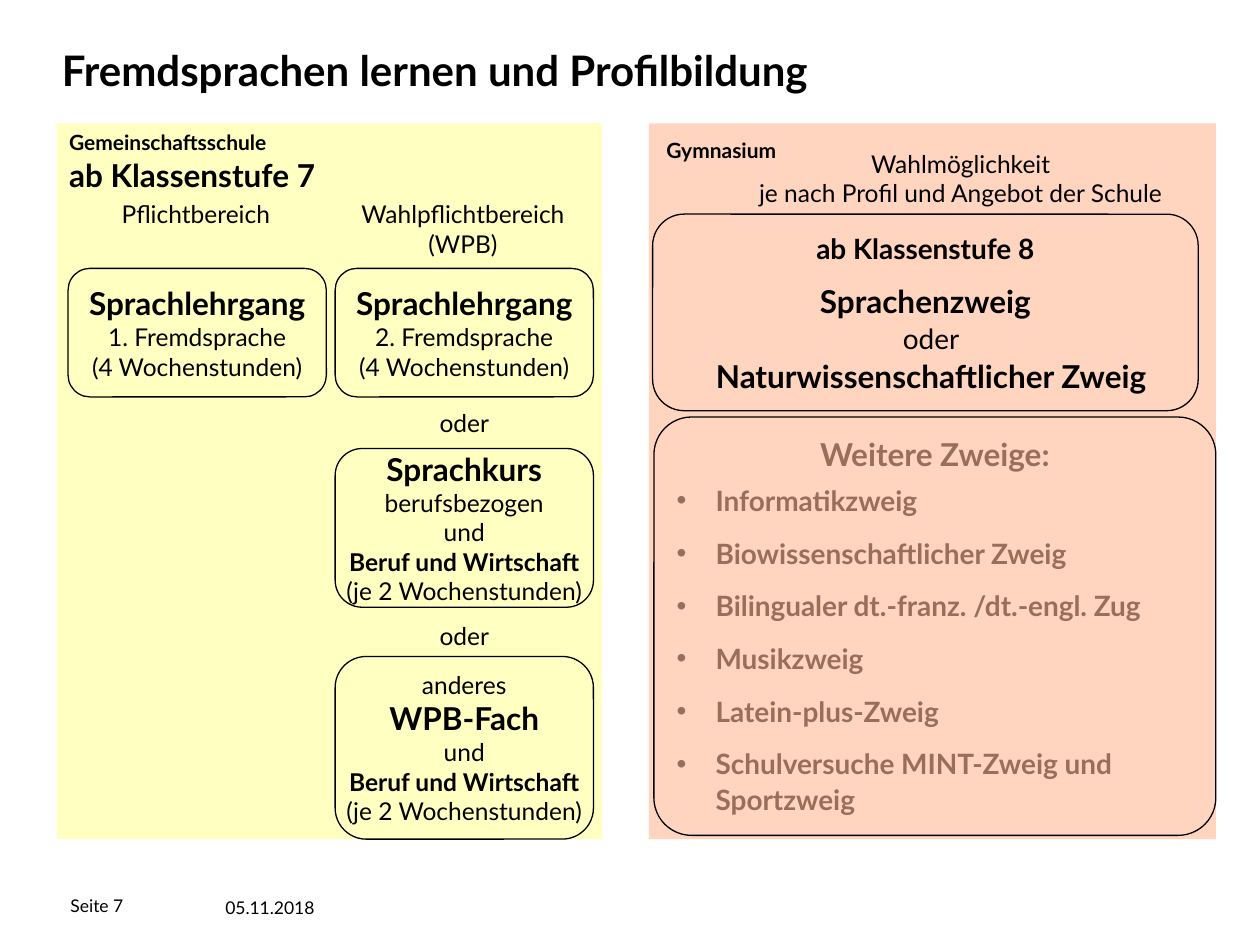
from collections import namedtuple

from lxml import etree
from pptx import Presentation
from pptx.dml.color import RGBColor
from pptx.enum.shapes import MSO_SHAPE
from pptx.enum.text import MSO_ANCHOR, MSO_AUTO_SIZE, PP_ALIGN
from pptx.oxml.ns import qn
from pptx.util import Inches, Pt

RECTANGLE, ROUNDED = MSO_SHAPE.RECTANGLE, MSO_SHAPE.ROUNDED_RECTANGLE
TOP, MIDDLE = MSO_ANCHOR.TOP, MSO_ANCHOR.MIDDLE
LEFT, CENTER = PP_ALIGN.LEFT, PP_ALIGN.CENTER
NO_AUTOFIT = MSO_AUTO_SIZE.NONE

BLACK = RGBColor(0x00, 0x00, 0x00)
YELLOW = RGBColor(0xFF, 0xFF, 0x99)
SALMON = RGBColor(0xFF, 0xBA, 0x97)
FONT = "Lato"
TEXT_INSETS = (0.1, 0.05)

SLIDE_WIDTH, SLIDE_HEIGHT = Inches(10), Inches(7.5)
COLUMN, ROW = SLIDE_WIDTH / 100, SLIDE_HEIGHT / 75

Box = namedtuple("Box", "left top width height")
Line = namedtuple("Line", "text size bold", defaults=(14, False))


def inside(region, left, top, width, height):
    return Box(region.left + left, region.top + top, width, height)


def frame(box):
    """Convert grid columns and rows to slide lengths."""
    return (round(box.left * COLUMN), round(box.top * ROW),
            round(box.width * COLUMN), round(box.height * ROW))


def format_font(font, size, bold):
    font.name = FONT
    font.size = Pt(size)
    font.bold = bold
    font.color.rgb = BLACK


def set_indent(paragraph, margin, indent, bullet=None):
    properties = paragraph._p.get_or_add_pPr()
    properties.set("marL", str(Inches(margin)))
    properties.set("indent", str(Inches(indent)))
    if bullet:
        etree.SubElement(properties, qn("a:buChar")).set("char", bullet)
    else:
        etree.SubElement(properties, qn("a:buNone"))


def write_lines(text_frame, lines, align=LEFT, anchor=TOP, wrap=True,
                insets=TEXT_INSETS):
    """Write one paragraph per line and return the paragraphs."""
    text_frame.auto_size = NO_AUTOFIT
    text_frame.word_wrap = wrap
    text_frame.vertical_anchor = anchor
    text_frame.margin_left = text_frame.margin_right = Inches(insets[0])
    text_frame.margin_top = text_frame.margin_bottom = Inches(insets[1])
    text_frame.text = "\n".join(line.text for line in lines)
    for paragraph, line in zip(text_frame.paragraphs, lines):
        paragraph.alignment = align
        for run in paragraph.runs:
            format_font(run.font, line.size, line.bold)
    return text_frame.paragraphs


def add_label(slide, box, *lines, **options):
    text_box = slide.shapes.add_textbox(*frame(box))
    write_lines(text_box.text_frame, lines, **options)


def add_panel(slide, box, color):
    panel = slide.shapes.add_shape(RECTANGLE, *frame(box))
    panel.shadow.inherit = False
    panel.line.fill.background()
    panel.fill.solid()
    panel.fill.fore_color.rgb = color
    color_element = panel._element.spPr.find(qn("a:solidFill"))[0]
    etree.SubElement(color_element, qn("a:alpha")).set("val", "60000")


def add_outline(slide, box, rounding):
    outline = slide.shapes.add_shape(ROUNDED, *frame(box))
    outline.adjustments[0] = rounding
    outline.shadow.inherit = False
    outline.fill.background()
    outline.line.color.rgb = BLACK
    outline.line.width = Pt(0.75)
    return outline


def add_card(slide, box, *lines):
    card = add_outline(slide, box, 0.17)
    write_lines(card.text_frame, lines, CENTER, MIDDLE, False, (0.04, 0.04))


def add_gemeinschaftsschule(slide, region):
    add_panel(slide, region, YELLOW)
    add_label(slide, inside(region, 0, 0, 19, 3),
              Line("Gemeinschaftsschule", 12, True))
    add_label(slide, inside(region, 0, 2, 23, 4.1),
              Line("ab Klassenstufe 7", 18, True), anchor=MIDDLE)
    centered = {"align": CENTER, "anchor": MIDDLE, "wrap": False}
    add_label(slide, inside(region, 4, 5.5, 14.1, 3.4),
              Line("Pflichtbereich"), **centered)
    add_label(slide, inside(region, 22.9, 5.5, 18.7, 5.7),
              Line("Wahlpflichtbereich"), Line("(WPB)"), **centered)

    card_width, required, elective = 20.5, 0.9, 22.1
    for number, left in enumerate((required, elective), start=1):
        add_card(slide, inside(region, left, 11.5, card_width, 10.2),
                 Line("Sprachlehrgang", 18, True),
                 Line(f"{number}. Fremdsprache"), Line("(4 Wochenstunden)"))

    profession = (Line("und"), Line("Beruf und Wirtschaft", 14, True),
                  Line("(je 2 Wochenstunden)"))
    add_card(slide, inside(region, elective, 25.8, card_width, 12.6),
             Line("Sprachkurs", 18, True), Line("berufsbezogen"), *profession)
    add_card(slide, inside(region, elective, 42.3, card_width, 14.5),
             Line("anderes"), Line("WPB-Fach", 18, True), *profession)
    for top in (22.1, 39):
        add_label(slide, inside(region, elective, top, card_width, 3.3),
                  Line("oder"), align=CENTER)


def add_gymnasium(slide, region):
    add_panel(slide, region, SALMON)
    add_label(slide, inside(region, 0.4, 0.6, 11.5, 3),
              Line("Gymnasium", 12, True))
    add_label(slide, inside(region, 7.2, 1.5, 35.1, 5.7),
              Line("Wahlmöglichkeit"),
              Line("je nach Profil und Angebot der Schule"),
              align=CENTER, anchor=MIDDLE, wrap=False)

    branches = add_outline(slide, inside(region, 0.3, 7.2, 43.3, 15.6), 0.16)
    paragraphs = write_lines(branches.text_frame, (
        Line("ab Klassenstufe 8", 16, True), Line("Sprachenzweig", 18, True),
        Line("oder", 16), Line("Naturwissenschaftlicher Zweig", 18, True)),
        align=CENTER)
    for paragraph in paragraphs:
        paragraph.line_spacing = 1.05
    paragraphs[1].space_before = Pt(9)
    for paragraph in paragraphs[2:]:
        set_indent(paragraph, 0.29, -0.2)

    add_further_branches(slide, inside(region, 0.4, 23.3, 44.6, 33.2))


def add_further_branches(slide, region):
    add_outline(slide, region, 0.09)
    body = slide.placeholders[1]
    corner = 0.8
    body.left, body.top, body.width, body.height = frame(
        inside(region, corner, corner, region.width - 2 * corner,
               region.height - 2 * corner))
    branches = ("Informatikzweig", "Biowissenschaftlicher Zweig",
                "Bilingualer dt.-franz. /dt.-engl. Zug", "Musikzweig",
                "Latein-plus-Zweig", "Schulversuche MINT-Zweig und Sportzweig")
    heading, *items = write_lines(
        body.text_frame, [Line("Weitere Zweige:", 18, True)]
        + [Line(branch, 16, True) for branch in branches])
    heading.alignment = CENTER
    heading.line_spacing = 1.05
    heading.space_before = Pt(0)
    set_indent(heading, 0, 0)
    for item in items:
        item.line_spacing = 1.05
        item.space_before = item.space_after = Pt(5)
        set_indent(item, 0.31, -0.31, "•")


def add_title(slide, box):
    title = slide.shapes.title
    title.left, title.top, title.width, title.height = frame(box)
    write_lines(title.text_frame,
                [Line("Fremdsprachen lernen und Profilbildung", 24, True)])


def add_footer(slide, region):
    add_label(slide, inside(region, 0, 0, 12.6, 2.4), Line("Seite 7", 10),
              anchor=MIDDLE, insets=(0, 0))
    add_label(slide, inside(region, 11.3, 0, 12.6, 2.4), Line("05.11.2018", 10))


def main():
    presentation = Presentation()
    presentation.slide_width = SLIDE_WIDTH
    presentation.slide_height = SLIDE_HEIGHT
    slide = presentation.slides.add_slide(presentation.slide_layouts[1])
    add_title(slide, Box(3.9, 3, 65.9, 5.1))
    add_gemeinschaftsschule(slide, Box(4.5, 9.8, 43.3, 56.8))
    add_gymnasium(slide, Box(51.5, 9.8, 45, 56.8))
    add_footer(slide, Box(5.6, 70.7, 23.9, 2.4))
    presentation.save("out.pptx")


if __name__ == "__main__":
    main()
